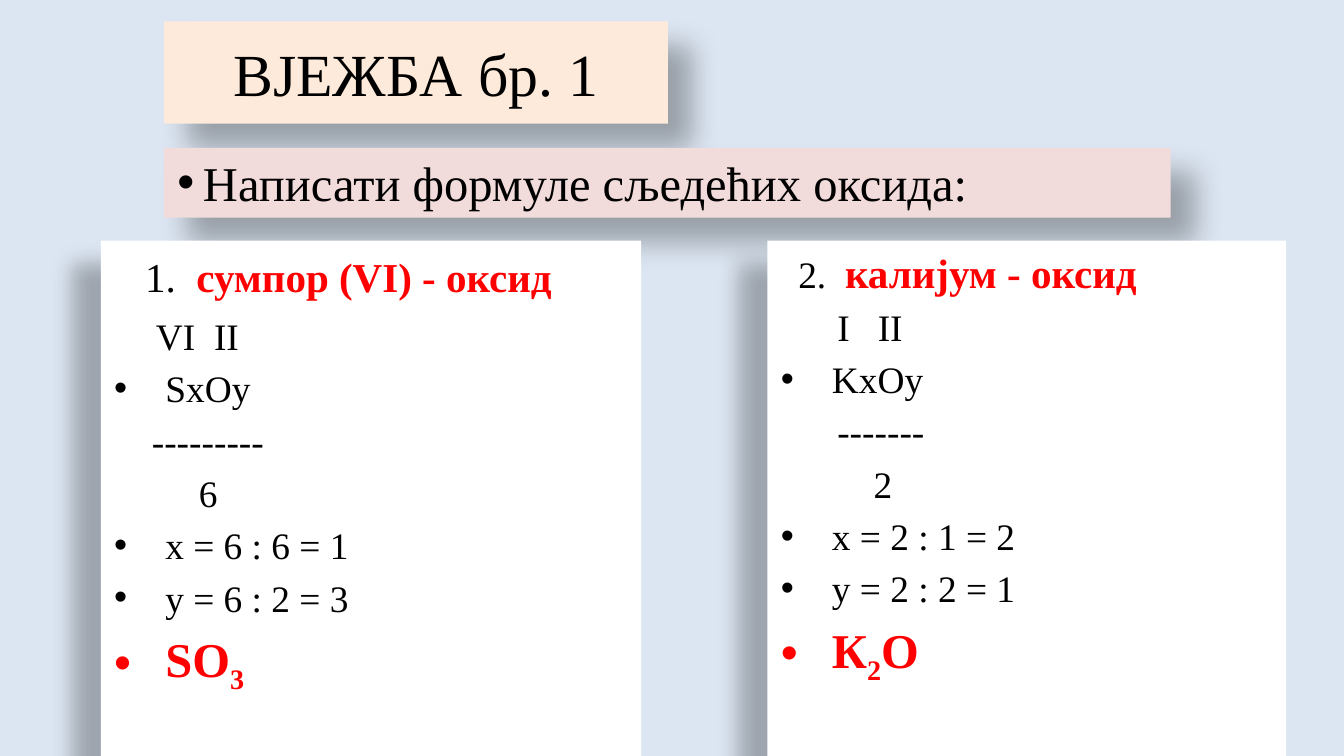
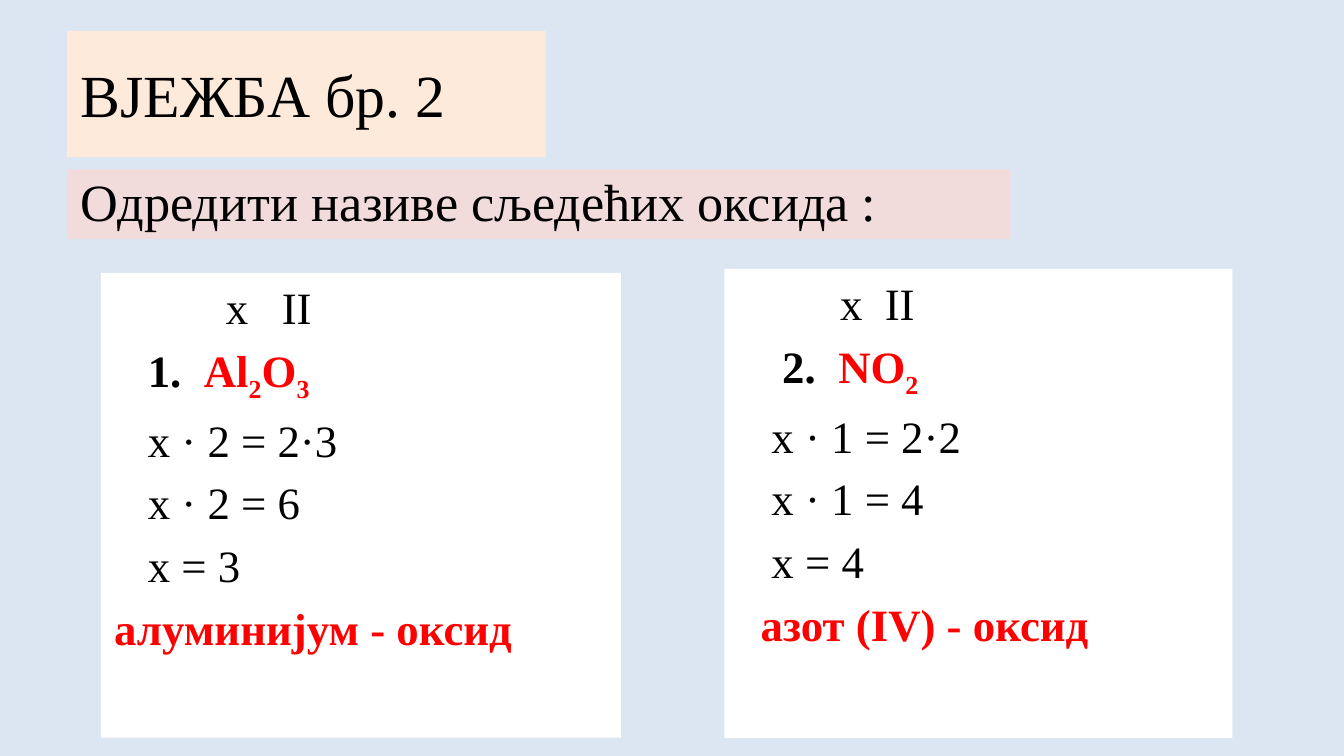
from dataclasses import dataclass

from pptx import Presentation
from pptx.dml.color import RGBColor
from pptx.enum.text import MSO_ANCHOR, MSO_AUTO_SIZE, PP_ALIGN
from pptx.oxml.ns import qn
from pptx.util import Inches, Pt
from lxml.etree import SubElement

COLORS = {
    "background": "DCE6F2",
    "title": "FDEADA",
    "task": "F2DCDB",
    "panel": "FFFFFF",
    "text": "000000",
    "accent": "FF0000",
}
FONT = "Times New Roman"
COMPARISON_LAYOUT = 4
TITLE, TASK, LEFT_PANEL, UNUSED_HEADING, RIGHT_PANEL = range(5)

# Shadows: opacity %, blur pt, distance pt, direction in degrees
BANNER_SHADOW = (30, 15, 18, 45)
PANEL_SHADOW = (28, 11.8, 19.7, 141)

# Text formats; a gap is one space widened by a number of points
RUN_FORMATS = {
    "plain": {"bold": False, "color": "text"},
    "strong": {"bold": True, "color": "text"},
    "accent": {"bold": True, "color": "accent"},
    "subscript": {"bold": True, "color": "accent", "baseline": -25000},
    "gap": {"bold": False, "color": "text"},
}


@dataclass
class Line:
    """A paragraph: runs are (text, kind); start and hanging are in inches."""
    runs: list
    size: float
    start: float = 0
    hanging: float = 0
    before: int = 20
    gap: float = 0
    number_size: float = 0


def plain(text, size, start=0):
    return Line([(text, "plain")], size, start)


def bullet(text, size=20):
    return Line([(text, "plain")], size, hanging=0.38)


def formula(*parts):
    return [(part, "subscript" if part.isdigit() else "accent") for part in parts]


def spaced(first, kind, rest, size, start, gap, **options):
    """A line whose first word stands apart from the rest."""
    runs = [(first, kind), (" ", "gap")] + rest
    return Line(runs, size, start, gap=gap, **options)


def valences(first, second, size, start, gap, **options):
    return spaced(first, "plain", [(second, "plain")], size, start, gap, **options)


def add_run(paragraph, text, kind, line):
    run = paragraph.add_run()
    run.text = text
    style = RUN_FORMATS[kind]
    is_number = line.number_size and kind == "plain"
    size = line.number_size if is_number else line.size
    values = {"name": FONT, "size": Pt(size), "bold": style["bold"]}
    for name, value in values.items():
        setattr(run.font, name, value)
    run.font.color.rgb = RGBColor.from_string(COLORS[style["color"]])
    properties = run._r.get_or_add_rPr()
    if "baseline" in style:
        properties.set("baseline", str(style["baseline"]))
    if kind == "gap":
        properties.set("spc", str(int(line.gap * 100)))


def format_paragraph(paragraph, line, is_first):
    properties = paragraph._p.get_or_add_pPr()
    indent = -line.hanging if line.hanging else line.start
    properties.set("marL", str(Inches(line.hanging)))
    properties.set("indent", str(Inches(indent)))
    spacing = SubElement(properties, qn("a:spcBef"))
    percent = 0 if is_first else line.before * 1000
    SubElement(spacing, qn("a:spcPct"), val=str(percent))
    if line.hanging:
        SubElement(properties, qn("a:buFont"), typeface="Arial")
        SubElement(properties, qn("a:buChar"), char="•")
    else:
        SubElement(properties, qn("a:buNone"))


def add_shadow(shape, shadow):
    shape.shadow.inherit = False
    if shadow is None:
        return
    opacity, blur, distance, direction = shadow
    effects = shape._element.spPr.find(qn("a:effectLst"))
    outer = SubElement(
        effects, qn("a:outerShdw"), blurRad=str(Pt(blur)), dist=str(Pt(distance)),
        dir=str(direction * 60000), algn="tl", rotWithShape="0")
    color = SubElement(outer, qn("a:srgbClr"), val="000000")
    SubElement(color, qn("a:alpha"), val=str(opacity * 1000))


def fill_box(shape, box, color, lines, shadow, anchor, align=PP_ALIGN.LEFT, top=0.05):
    """Place a placeholder in its box, then fill it and write its lines."""
    for name, value in zip(("left", "top", "width", "height"), box):
        setattr(shape, name, Inches(value))
    shape.fill.solid()
    shape.fill.fore_color.rgb = RGBColor.from_string(COLORS[color])
    add_shadow(shape, shadow)
    frame = shape.text_frame
    frame_format = {
        "word_wrap": True,
        "auto_size": MSO_AUTO_SIZE.NONE,
        "vertical_anchor": anchor,
        "margin_top": Inches(top),
    }
    for name, value in frame_format.items():
        setattr(frame, name, value)
    for index, line in enumerate(lines):
        paragraph = frame.add_paragraph() if index else frame.paragraphs[0]
        format_paragraph(paragraph, line, index == 0)
        paragraph.alignment = align
        for text, kind in line.runs:
            add_run(paragraph, text, kind, line)


def add_title(slide, box, text, align, shadow=None):
    fill_box(slide.placeholders[TITLE], box, "title", [plain(text, 32)],
             shadow, MSO_ANCHOR.MIDDLE, align)


def add_task(slide, box, line, shadow=None):
    fill_box(slide.placeholders[TASK], box, "task", [line], shadow, MSO_ANCHOR.BOTTOM)


def add_panel(slide, index, box, lines, shadow=None, top=0.05):
    fill_box(slide.placeholders[index], box, "panel", lines, shadow,
             MSO_ANCHOR.TOP, top=top)


def add_exercise_slide(presentation):
    slide = presentation.slides.add_slide(presentation.slide_layouts[COMPARISON_LAYOUT])
    slide.background.fill.solid()
    slide.background.fill.fore_color.rgb = RGBColor.from_string(COLORS["background"])
    unused = slide.placeholders[UNUSED_HEADING]._element
    unused.getparent().remove(unused)
    return slide


def build_formulas_slide(presentation):
    slide = add_exercise_slide(presentation)
    add_title(slide, (1.22, 0.16, 3.75, 0.76), "ВЈЕЖБА бр. 1",
              PP_ALIGN.CENTER, BANNER_SHADOW)
    task = Line([("Написати формуле сљедећих оксида:", "plain")], 26, hanging=0.19)
    add_task(slide, (1.22, 1.1, 7.49, 0.52), task, BANNER_SHADOW)

    # Sulfur oxide
    add_panel(slide, LEFT_PANEL, (0.75, 1.79, 4.02, 3.84), [
        spaced("1.", "plain", [("сумпор (VI) - оксид", "accent")], 22, 0.23, 5.5),
        valences("VI", "II", 20, 0.31, 5, before=34),
        bullet("SxOy"),
        plain("---------", 20, 0.28),
        plain("6", 20, 0.63),
        bullet("x = 6 : 6 = 1"),
        bullet("y = 6 : 2 = 3"),
        Line(formula("SO", "3"), 26, hanging=0.38),
    ], PANEL_SHADOW, top=0.08)

    # Potassium oxide
    add_panel(slide, RIGHT_PANEL, (5.71, 1.79, 3.86, 3.84), [
        spaced("2.", "plain", [("калијум - оксид", "accent")], 22, 0.13, 4.5,
               number_size=20),
        valences("I", "II", 20, 0.42, 10),
        bullet("KxOy"),
        plain("-------", 20, 0.42),
        plain("2", 20, 0.69),
        bullet("x = 2 : 1 = 2"),
        bullet("y = 2 : 2 = 1"),
        Line(formula("К", "2", "O"), 26, hanging=0.38),
    ], PANEL_SHADOW)


def build_names_slide(presentation):
    slide = add_exercise_slide(presentation)
    add_title(slide, (0.5, 0.23, 3.56, 0.94), "ВЈЕЖБА бр. 2", PP_ALIGN.LEFT)
    add_task(slide, (0.5, 1.26, 7.02, 0.52),
             plain("Одредити називе сљедећих оксида :", 28))

    # Aluminium oxide
    add_panel(slide, LEFT_PANEL, (0.75, 2.03, 3.87, 3.46), [
        valences("x", "II", 24, 0.83, 12),
        spaced("1.", "strong", formula("Аl", "2", "O", "3"), 24, 0.25, 6),
        *[plain(step, 24, 0.25) for step in ("x · 2 = 2·3", "x · 2 = 6", "x = 3")],
        Line([("алуминијум - оксид", "accent")], 24),
    ])

    # Nitrogen oxide
    add_panel(slide, RIGHT_PANEL, (5.39, 2, 3.78, 3.49), [
        valences("x", "II", 24, 0.76, 6),
        spaced("2.", "strong", formula("NO", "2"), 24, 0.33, 6),
        *[plain(step, 24, 0.25) for step in ("x · 1 = 2·2", "x · 1 = 4", "x = 4")],
        Line([("азот (IV) - оксид", "accent")], 24, 0.17),
    ])


def main():
    presentation = Presentation()
    presentation.slide_width = Inches(10)
    presentation.slide_height = presentation.slide_width * 9 // 16
    build_formulas_slide(presentation)
    build_names_slide(presentation)
    presentation.save("out.pptx")


if __name__ == "__main__":
    main()
